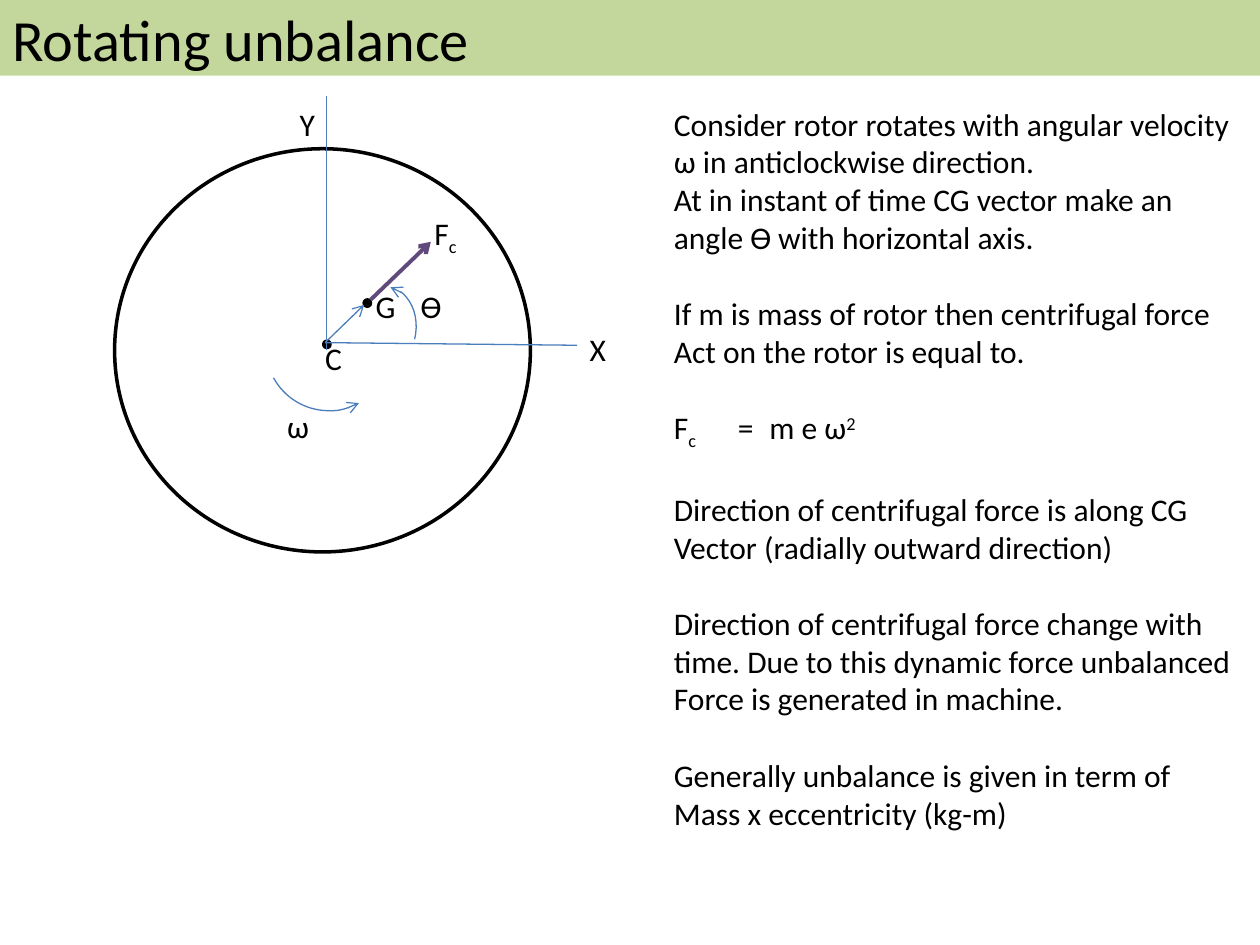
from lxml.etree import SubElement
from pptx import Presentation
from pptx.dml.color import RGBColor
from pptx.enum.shapes import MSO_CONNECTOR, MSO_SHAPE
from pptx.enum.text import MSO_ANCHOR, MSO_AUTO_SIZE, PP_ALIGN
from pptx.oxml.ns import qn
from pptx.util import Pt

FONT = "Calibri"
BLACK = RGBColor(0x00, 0x00, 0x00)
GREEN = RGBColor(0xC3, 0xD6, 0x9B)
BLUE = RGBColor(0x4B, 0x7E, 0xBC)
PURPLE = RGBColor(0x60, 0x4A, 0x7B)
TEXT_SIZE = 18
PARAGRAPH_GAP = 22
SUBSCRIPT, SUPERSCRIPT = -25, 30

FORCE = [("F", 0), ("c", SUBSCRIPT)]
FORMULA = FORCE + [("\t=\tm e ω", 0), ("2", SUPERSCRIPT)]
FORMULA_TABS = (36.5, 54.5)
EXPLANATION = [
    ["Consider rotor rotates with angular velocity",
     "ω in anticlockwise direction.",
     "At in instant of time CG vector make an angle Ɵ with horizontal axis."],
    ["If m is mass of rotor then centrifugal force",
     "Act on the rotor is equal to."],
    [FORMULA],
    ["Direction of centrifugal force is along CG",
     "Vector (radially outward direction)"],
    ["Direction of centrifugal force change with time. "
     "Due to this dynamic force unbalanced",
     "Force is generated in machine."],
    ["Generally unbalance is given in term of",
     "Mass x eccentricity (kg-m)"],
]


def write(paragraph, content, size=TEXT_SIZE):
    """Fill a paragraph with a string or with (text, baseline percent) runs."""
    runs = [(content, 0)] if isinstance(content, str) else content
    for text, baseline in runs:
        run = paragraph.add_run()
        run.text = text
        if baseline:
            run.font._element.set("baseline", str(baseline * 1000))
    font = paragraph.font
    font.name, font.size = FONT, Pt(size)
    font.color.rgb = BLACK


def add_tab_stops(paragraph, positions):
    tab_list = SubElement(paragraph._p.get_or_add_pPr(), qn("a:tabLst"))
    for position in positions:
        SubElement(tab_list, qn("a:tab"), pos=str(Pt(position)), algn="l")


def add_text_frame(slide, left, top, width, height):
    box = slide.shapes.add_textbox(Pt(left), Pt(top), Pt(width), Pt(height))
    frame = box.text_frame
    frame.word_wrap = True
    frame.auto_size = MSO_AUTO_SIZE.SHAPE_TO_FIT_TEXT
    return frame


def add_shape(slide, kind, left, top, width, height, fill=None, line=None, weight=2):
    shape = slide.shapes.add_shape(kind, Pt(left), Pt(top), Pt(width), Pt(height))
    shape.shadow.inherit = False
    if fill is None:
        shape.fill.background()
    else:
        shape.fill.solid()
        shape.fill.fore_color.rgb = fill
    if line is None:
        shape.line.fill.background()
    else:
        shape.line.color.rgb = line
        shape.line.width = Pt(weight)
    return shape


def add_arrowhead(shape, end):
    SubElement(shape.line._get_or_add_ln(), qn(f"a:{end}"), type="arrow")


def add_title_bar(slide, left, top, width, height):
    bar = add_shape(slide, MSO_SHAPE.RECTANGLE, left, top, width, height, GREEN)
    frame = bar.text_frame
    frame.vertical_anchor = MSO_ANCHOR.MIDDLE
    frame.paragraphs[0].alignment = PP_ALIGN.LEFT
    write(frame.paragraphs[0], "Rotating unbalance", 33.3)


def add_rotor_diagram(slide, left, top, width, height):
    """Draw the rotor in the given box; axes and labels reach past it."""
    def dot(x, y):
        add_shape(slide, MSO_SHAPE.OVAL, left + x, top + y, 3.6, 3.6, BLACK, BLACK)

    def label(content, x, y, label_width):
        frame = add_text_frame(slide, left + x, top + y, label_width, 29)
        write(frame.paragraphs[0], content)

    def line(start, end, color=BLUE, weight=0.75, arrow=False):
        connector = slide.shapes.add_connector(
            MSO_CONNECTOR.STRAIGHT, Pt(left + start[0]), Pt(top + start[1]),
            Pt(left + end[0]), Pt(top + end[1]))
        connector.line.color.rgb = color
        connector.line.width = Pt(weight)
        if arrow:
            add_arrowhead(connector, "tailEnd")
        SubElement(connector._element.spPr, qn("a:effectLst"))

    def rotation_arc(x, y, arc_width, arc_height, rotation):
        arc = add_shape(slide, MSO_SHAPE.ARC, left + x, top + y,
                        arc_width, arc_height, line=BLUE, weight=0.75)
        arc.rotation = rotation
        add_arrowhead(arc, "headEnd")

    add_shape(slide, MSO_SHAPE.OVAL, left, top, width, height, line=BLACK)
    dot(119.5, 110)
    label("C", 115.2, 105, 12.2)
    dot(142.6, 86.4)
    label("G", 142, 75.6, 23)

    center = (120.3, 110.8)
    line(center, (142.6, 89.2), arrow=True)
    line(center, (264.3, 112.3))
    line((121, 115.2), (121, -30.3))
    label("Y", 98.7, -28.8, 24.5)
    label("X", 264.3, 100, 24.5)

    rotation_arc(86.4, 77.7, 72, 72, 151.5)
    label("ω", 91.5, 144, 33)

    line((146.2, 86.4), (180.7, 53.2), PURPLE, 2.25, arrow=True)
    label(FORCE, 175.7, 33.8, 31)
    rotation_arc(131.1, 78.4, 41, 51.1, 13.8)
    label("Ɵ", 167.8, 75.6, 33)


def add_explanation(slide, left, top, width, height):
    frame = add_text_frame(slide, left, top, width, height)
    paragraph = frame.paragraphs[0]
    for group_index, group in enumerate(EXPLANATION):
        for line_index, content in enumerate(group):
            if group_index or line_index:
                paragraph = frame.add_paragraph()
            if group_index and not line_index:
                paragraph.space_before = Pt(PARAGRAPH_GAP)
            if content is FORMULA:
                add_tab_stops(paragraph, FORMULA_TABS)
            write(paragraph, content)


def main():
    presentation = Presentation()
    presentation.slide_width, presentation.slide_height = Pt(720), Pt(540)
    slide = presentation.slides.add_slide(presentation.slide_layouts[6])
    add_title_bar(slide, 0, 0, 720, 43.2)
    add_rotor_diagram(slide, 65.5, 85, 237.6, 230.4)
    add_explanation(slide, 378, 56.2, 342, 414.7)
    presentation.save("out.pptx")


if __name__ == "__main__":
    main()
